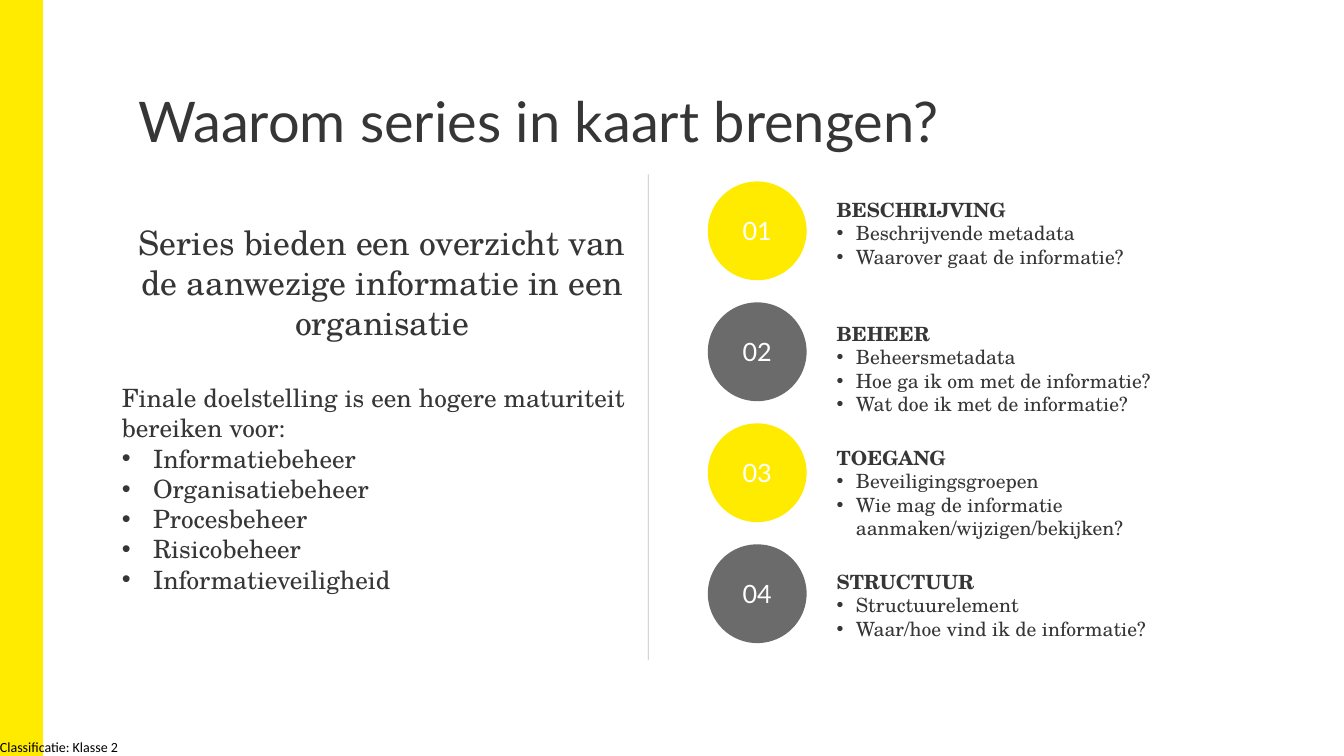
from lxml import etree
from pptx import Presentation
from pptx import util as u
from pptx.dml.color import RGBColor
from pptx.enum import shapes, text
from pptx.oxml import ns

TITLE = "Waarom series in kaart brengen?"
CLASSIFICATION = "Classificatie: Klasse 2"
STATEMENT = "Series bieden een overzicht van de aanwezige informatie in een organisatie"
GOAL = "Finale doelstelling is een hogere maturiteit bereiken voor:"
GOALS = ["Informatiebeheer", "Organisatiebeheer", "Procesbeheer", "Risicobeheer", "Informatieveiligheid"]
REASONS = [
    ("BESCHRIJVING", 4.02, ["Beschrijvende metadata", "Waarover gaat de informatie?"]),
    ("BEHEER", 4.02, ["Beheersmetadata", "Hoe ga ik om met de informatie?", "Wat doe ik met de informatie?"]),
    ("TOEGANG", 5.02, ["Beveiligingsgroepen", "Wie mag de informatie aanmaken/wijzigen/bekijken?"]),
    ("STRUCTUUR", 4.02, ["Structuurelement", "Waar/hoe vind ik de informatie?"]),
]
YELLOW, GRAY, DARK, WHITE, BLACK = "FFEB00", "6B6B6B", "373636", "FFFFFF", "000000"
BODY_FONT, TITLE_FONT = "TeX Gyre Schola", "Lato"
CENTER = text.PP_ALIGN.CENTER


def color(value):
    return RGBColor.from_string(value)


def add_paragraph(frame, words, size, font=BODY_FONT, ink=DARK, bold=False, align=text.PP_ALIGN.LEFT, indent=0):
    paragraph = frame.add_paragraph() if frame.text else frame.paragraphs[0]
    paragraph.text = words
    paragraph.alignment = align
    run_font = paragraph.runs[0].font
    run_font.name, run_font.size, run_font.bold = font, u.Pt(size), bold
    run_font.color.rgb = color(ink)
    if indent:
        properties = paragraph._p.get_or_add_pPr()
        properties.set("marL", str(u.Inches(indent)))
        properties.set("indent", str(-u.Inches(indent)))
        etree.SubElement(properties, ns.qn("a:buFont")).set("typeface", "Arial")
        etree.SubElement(properties, ns.qn("a:buChar")).set("char", "•")
    return paragraph


def add_text_frame(slide, left, top, width, height, inset=True):
    frame = slide.shapes.add_textbox(*map(u.Inches, (left, top, width, height))).text_frame
    frame.word_wrap = True
    if not inset:
        frame.margin_left = frame.margin_right = frame.margin_top = frame.margin_bottom = 0
    return frame


def add_filled_shape(slide, kind, left, top, width, height, fill):
    shape = slide.shapes.add_shape(kind, *map(u.Inches, (left, top, width, height)))
    shape.shadow.inherit = False
    shape.fill.solid()
    shape.fill.fore_color.rgb = color(fill)
    shape.line.fill.background()
    return shape


def add_divider(slide):
    divider = slide.shapes.add_connector(
        shapes.MSO_CONNECTOR.STRAIGHT, *map(u.Inches, (6.43, 1.73, 6.43, 6.55)))
    divider.line.color.rgb = color("7F7F7F")
    divider.line.width = u.Pt(0.5)
    shape_properties = divider._element.spPr
    tint = shape_properties.find(".//" + ns.qn("a:srgbClr"))
    etree.SubElement(tint, ns.qn("a:alpha")).set("val", "50000")
    etree.SubElement(shape_properties, ns.qn("a:effectLst"))


def add_reason(slide, index, heading, width, points):
    fill = GRAY if index % 2 else YELLOW
    circle = add_filled_shape(slide, shapes.MSO_SHAPE.OVAL, 7.02, 1.8 + 1.2 * index, 0.98, 0.98, fill)
    circle.text_frame.vertical_anchor = text.MSO_ANCHOR.MIDDLE
    add_paragraph(circle.text_frame, f"{index + 1:02d}", 18, TITLE_FONT, WHITE, align=CENTER)
    frame = add_text_frame(slide, 8.2, 1.91 + 1.23 * index, width, 0.81)
    add_paragraph(frame, heading, 14, bold=True)
    for point in points:
        add_paragraph(frame, point, 14, indent=0.19)


def main():
    presentation = Presentation()
    presentation.slide_width, presentation.slide_height = u.Inches(13.33), u.Inches(7.5)
    slide = presentation.slides.add_slide(presentation.slide_layouts[6])

    side_bar = add_filled_shape(slide, shapes.MSO_SHAPE.RECTANGLE, 0, 0, 0.42, 7.5, YELLOW)
    side_bar.line.color.rgb = color(YELLOW)
    side_bar.line.width = u.Pt(1)
    footer = add_text_frame(slide, 0, 7.33, 1.3, 0.17, inset=False)
    add_paragraph(footer, CLASSIFICATION, 10, "Calibri", BLACK)
    title = add_text_frame(slide, -0.41, 1, 11.5, 0.97, inset=False)
    add_paragraph(title, TITLE, 40, TITLE_FONT, align=CENTER).line_spacing = u.Pt(38)

    summary = add_text_frame(slide, 1.11, 2.15, 5.36, 5.25)
    add_paragraph(summary, STATEMENT, 24, align=CENTER)
    add_paragraph(summary, GOAL, 18).space_before = u.Pt(28.5)
    for goal in GOALS:
        add_paragraph(summary, goal, 18, indent=0.31)

    add_divider(slide)
    for index, reason in enumerate(REASONS):
        add_reason(slide, index, *reason)
    presentation.save("out.pptx")


if __name__ == "__main__":
    main()
